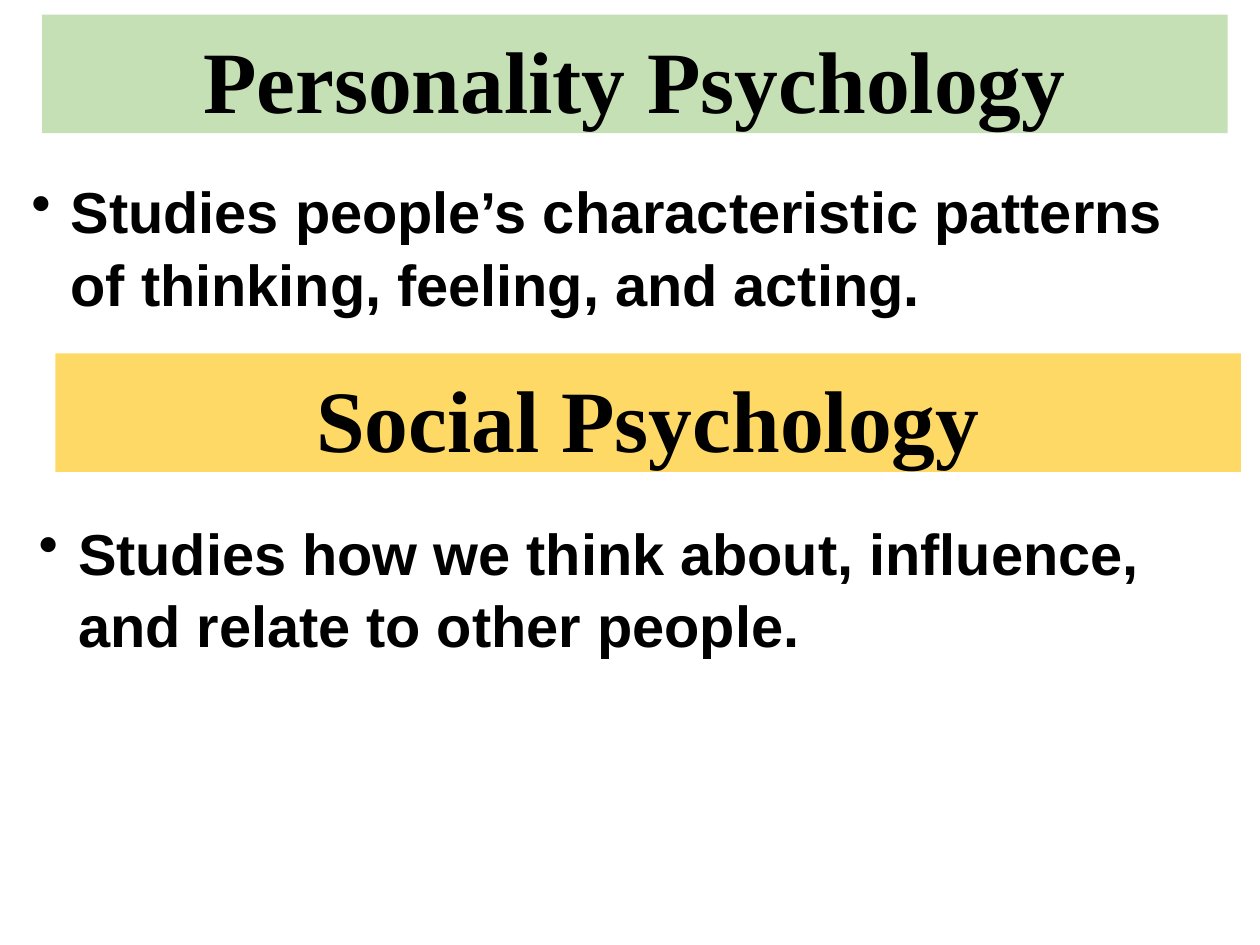
from pptx import Presentation
from pptx import util as u
from pptx.dml.color import RGBColor
from pptx.enum import shapes, text
from pptx.oxml import parse_xml
from pptx.oxml.ns import nsdecls

Pt = u.Pt
BLACK = RGBColor(0x00, 0x00, 0x00)
GREEN = RGBColor(0xC5, 0xE0, 0xB4)
GOLD = RGBColor(0xFF, 0xD9, 0x66)


def write(box, words, font, size, align, bullet_indent=None):
    """Fill a box with one bold paragraph, bulleted when an indent is given."""
    frame = box.text_frame
    frame.word_wrap = True
    para = frame.paragraphs[0]
    para.alignment = align
    para.line_spacing = 1.05
    if bullet_indent:
        props = para._p.get_or_add_pPr()
        props.set("marL", str(Pt(bullet_indent)))
        props.set("indent", str(-Pt(bullet_indent)))
        props.append(parse_xml(f'<a:buChar {nsdecls("a")} char="•"/>'))
    span = para.add_run()
    span.text = words
    span.font.name = font
    span.font.size = Pt(size)
    span.font.bold = True
    span.font.color.rgb = BLACK


class Slide:
    heading_font, heading_size = "Times New Roman", 50
    body_font, body_size = "Arial", 33

    def __init__(self, deck):
        self.page = deck.slides.add_slide(deck.slide_layouts[6])

    def banner(self, left, top, words, fill):
        box = self.page.shapes.add_shape(
            shapes.MSO_SHAPE.RECTANGLE, Pt(left), Pt(top), Pt(677.5), Pt(67.7))
        box.shadow.inherit = False
        box.fill.solid()
        box.fill.fore_color.rgb = fill
        box.line.fill.background()
        box.text_frame.vertical_anchor = text.MSO_ANCHOR.TOP
        write(box, words, self.heading_font, self.heading_size, text.PP_ALIGN.CENTER)

    def bullet(self, left, top, words):
        box = self.page.shapes.add_textbox(Pt(left), Pt(top), Pt(690.5), Pt(87.1))
        write(box, words, self.body_font, self.body_size, text.PP_ALIGN.LEFT,
              bullet_indent=22.5)


def main():
    deck = Presentation()
    deck.slide_width, deck.slide_height = Pt(720), Pt(540)
    slide = Slide(deck)

    # Personality psychology
    slide.banner(24, 8.4, "Personality Psychology", GREEN)
    slide.bullet(10.8, 95, "Studies people’s characteristic patterns of thinking, "
                           "feeling, and acting.")

    # Social psychology
    slide.banner(31.6, 202, "Social Psychology", GOLD)
    slide.bullet(15, 290.2, "Studies how we think about, influence, and relate to "
                            "other people.")

    deck.save("out.pptx")


if __name__ == "__main__":
    main()
